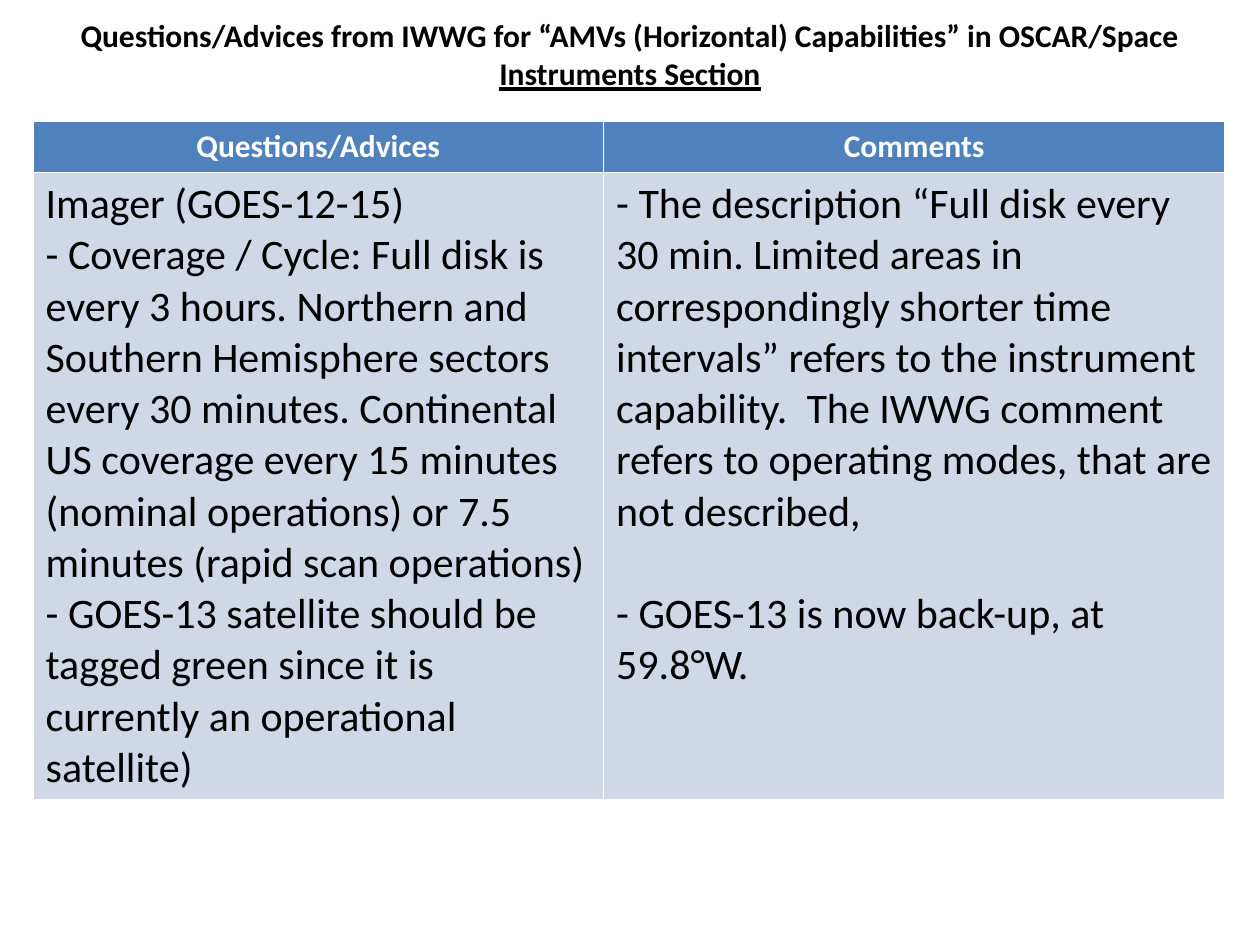
from pptx import Presentation
from pptx.dml.color import RGBColor
from pptx.enum.text import MSO_ANCHOR, PP_ALIGN
from pptx.util import Pt

CENTER, LEFT = PP_ALIGN.CENTER, PP_ALIGN.LEFT
MIDDLE = MSO_ANCHOR.MIDDLE
FONT = "Calibri"
COLORS = {"header": "4F81BD", "body": "D0D8E8", "white": "FFFFFF", "black": "000000"}
TITLE_LINES = [
    "Questions/Advices from IWWG for “AMVs (Horizontal) Capabilities” in OSCAR/Space",
    "Instruments Section",
]
HEADERS = ["Questions/Advices", "Comments"]
QUESTIONS = [
    "Imager (GOES-12-15)",
    "- Coverage / Cycle: Full disk is every 3 hours. Northern and Southern Hemisphere "
    "sectors every 30 minutes. Continental US coverage every 15 minutes (nominal "
    "operations) or 7.5 minutes (rapid scan operations)",
    "- GOES-13 satellite should be tagged green since it is currently an operational satellite)",
]
COMMENTS = [
    "- The description “Full disk every 30 min. Limited areas in correspondingly shorter "
    "time intervals” refers to the instrument capability.  The IWWG comment refers to "
    "operating modes, that are not described,",
    "- GOES-13 is now back-up, at 59.8°W.",
]


def add_run(paragraph, text, size, color, bold=False, underline=None):
    """Append one formatted run to a paragraph."""
    run = paragraph.add_run()
    run.text = text
    font = run.font
    font.name, font.size, font.bold, font.underline = FONT, Pt(size), bold, underline
    font.color.rgb = RGBColor.from_string(COLORS[color])


def add_title(slide, left, top, width, height):
    """Place the two-line title with its second line underlined."""
    title = slide.shapes.title
    title.left, title.top, title.width, title.height = map(Pt, (left, top, width, height))
    title.text_frame.vertical_anchor = MIDDLE
    heading = title.text_frame.paragraphs[0]
    heading.alignment = CENTER
    add_run(heading, TITLE_LINES[0], 18, "black", bold=True)
    heading.add_line_break()
    add_run(heading, TITLE_LINES[1], 18, "black", bold=True, underline=True)


def fill_cell(cell, paragraphs, fill, size, color, bold, align, gap=0):
    """Fill a cell with paragraphs separated by a gap."""
    cell.fill.solid()
    cell.fill.fore_color.rgb = RGBColor.from_string(COLORS[fill])
    frame = cell.text_frame
    for index, text in enumerate(paragraphs):
        paragraph = frame.add_paragraph() if index else frame.paragraphs[0]
        paragraph.alignment = align
        if index and gap:
            paragraph.space_before = Pt(gap)
        add_run(paragraph, text, size, color, bold)


def add_advice_table(slide, left, top, column_widths, row_heights):
    """Place the table of questions and the comments that answer them."""
    table = slide.shapes.add_table(
        2, 2, Pt(left), Pt(top), Pt(sum(column_widths)), Pt(sum(row_heights))
    ).table
    for column, width in zip(table.columns, column_widths):
        column.width = Pt(width)
    for row, height in zip(table.rows, row_heights):
        row.height = Pt(height)
    for index, header in enumerate(HEADERS):
        fill_cell(table.cell(0, index), [header], "header", 18, "white", True, CENTER)
    for index, (answers, gap) in enumerate([(QUESTIONS, 0), (COMMENTS, 29.3)]):
        fill_cell(table.cell(1, index), answers, "body", 24, "black", False, LEFT, gap)


def main():
    """Build and save the slide."""
    deck = Presentation()
    deck.slide_width, deck.slide_height = Pt(720), Pt(540)
    slide = deck.slides.add_slide(deck.slide_layouts[5])
    add_advice_table(slide, 18.9, 69.4, (326, 355), (29, 358))
    add_title(slide, 36, 0, 648, 62)
    deck.save("out.pptx")


if __name__ == "__main__":
    main()
